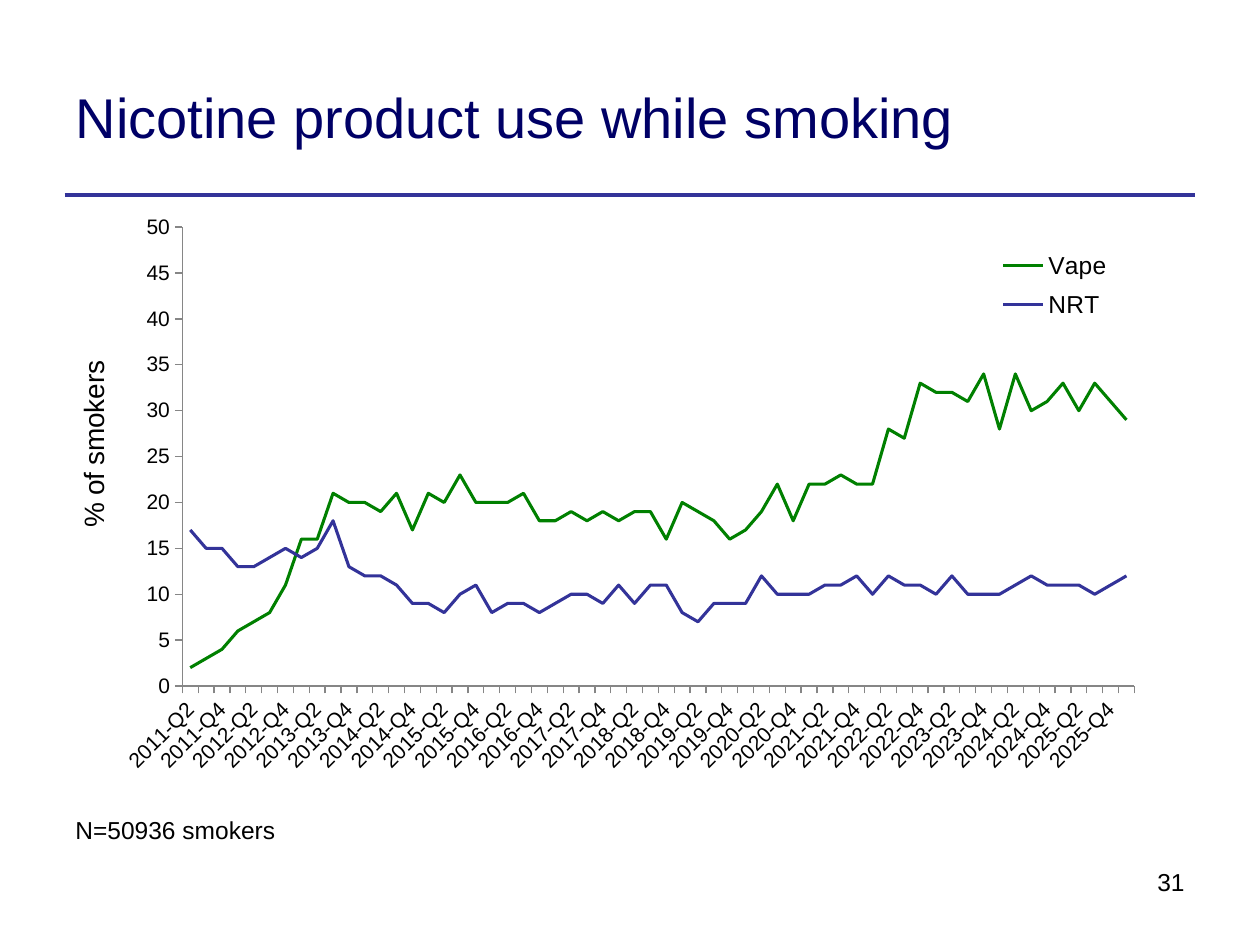
import pptx
import pptx.chart.data
import pptx.dml.color
import pptx.enum.chart
import pptx.enum.shapes
import pptx.enum.text
import pptx.oxml
import pptx.oxml.ns
import pptx.util
from pptx.util import Pt

FONT = "Arial"
COLORS = {"title": "000066", "rule": "333399", "text": "000000",
          "axis": "868686", "Vape": "008000", "NRT": "333399"}
SERIES = {
    "Vape": [2, 3, 4, 6, 7, 8, 11, 16, 16, 21, 20, 20, 19, 21, 17, 21, 20, 23, 20, 20,
             20, 21, 18, 18, 19, 18, 19, 18, 19, 19, 16, 20, 19, 18, 16, 17, 19, 22, 18, 22,
             22, 23, 22, 22, 28, 27, 33, 32, 32, 31, 34, 28, 34, 30, 31, 33, 30, 33, 31, 29],
    "NRT": [17, 15, 15, 13, 13, 14, 15, 14, 15, 18, 13, 12, 12, 11, 9, 9, 8, 10, 11, 8,
            9, 9, 8, 9, 10, 10, 9, 11, 9, 11, 11, 8, 7, 9, 9, 9, 12, 10, 10, 10,
            11, 11, 12, 10, 12, 11, 11, 10, 12, 10, 10, 10, 11, 12, 11, 11, 11, 10, 11, 12],
}
# Quarters run from 2011-Q2 to 2026-Q1
QUARTERS = [f"{2011 + n // 4}-Q{n % 4 + 1}" for n in range(1, 61)]


def color(name):
    return pptx.dml.color.RGBColor.from_string(COLORS[name])


def style_font(font, size, name="text"):
    font.name = FONT
    font.size = Pt(size)
    font.bold = False
    font.color.rgb = color(name)


def add_span(para, text, size, name="text"):
    span = para.add_run()
    span.text = text
    style_font(span.font, size, name)


def make_element(tag, **attributes):
    element = pptx.oxml.parse_xml(f"<{tag} {pptx.oxml.ns.nsdecls(tag.split(':')[0])}/>")
    for key, value in attributes.items():
        element.set(key, str(value))
    return element


def set_layout(parent, index, chart_box, box, inner=False):
    """Place a chart part at a box in points, measured within the chart area."""
    for old in parent.findall(pptx.oxml.ns.qn("c:layout")):
        parent.remove(old)
    layout = make_element("c:layout")
    manual = make_element("c:manualLayout")
    layout.append(manual)
    if inner:
        manual.append(make_element("c:layoutTarget", val="inner"))
    for key in "xy":
        manual.append(make_element(f"c:{key}Mode", val="edge"))
    for key, value, whole in zip("xywh", box, chart_box * 2):
        manual.append(make_element(f"c:{key}", val=value / whole))
    parent.insert(index, layout)


def add_heading(page, left, top, width, height):
    # Title
    title = page.shapes.title
    title.left, title.top, title.width, title.height = map(Pt, (left, top, width, height))
    title.text_frame.vertical_anchor = pptx.enum.text.MSO_ANCHOR.MIDDLE
    para = title.text_frame.paragraphs[0]
    para.alignment = pptx.enum.text.PP_ALIGN.LEFT
    add_span(para, "Nicotine product use while smoking", 32, "title")

    # Rule under the title
    bottom = Pt(top + height - 0.2)
    rule = page.shapes.add_connector(pptx.enum.shapes.MSO_CONNECTOR.STRAIGHT,
                                     Pt(left + 1), bottom, Pt(left + 647), bottom)
    rule.line.color.rgb = color("rule")
    rule.line.width = Pt(2.25)
    rule._element.spPr.append(make_element("a:effectLst"))


def style_axis(axis):
    axis.has_major_gridlines = False
    axis.major_tick_mark = pptx.enum.chart.XL_TICK_MARK.OUTSIDE
    axis.minor_tick_mark = pptx.enum.chart.XL_TICK_MARK.NONE
    axis.format.line.color.rgb = color("axis")
    axis.format.line.width = Pt(0.75)
    style_font(axis.tick_labels.font, 12)


def add_trend_chart(page, left, top, width, height):
    data = pptx.chart.data.CategoryChartData()
    data.categories = QUARTERS
    for name, values in SERIES.items():
        data.add_series(name, values)
    chart = page.shapes.add_chart(pptx.enum.chart.XL_CHART_TYPE.LINE, Pt(left), Pt(top),
                                  Pt(width), Pt(height), data).chart
    style_font(chart.font, 18)
    chart.has_title = False
    chart.plots[0].vary_by_categories = False
    area = (width, height)
    plot_area = chart._chartSpace.xpath("c:chart/c:plotArea")[0]
    set_layout(plot_area, 0, area, (72.2, 15.6, 544.1, 262.3), inner=True)

    # Lines
    for series in chart.plots[0].series:
        series.smooth = False
        series.marker.style = pptx.enum.chart.XL_MARKER_STYLE.NONE
        series.format.line.color.rgb = color(series.name)
        series.format.line.width = Pt(1.75)

    # Quarter axis: slanted labels, every second one shown
    quarters = chart.category_axis
    style_axis(quarters)
    axis_xml = quarters._element
    slant = axis_xml.xpath("c:txPr/a:bodyPr")[0]
    slant.set("rot", "-2700000")
    slant.set("vert", "horz")
    last = axis_xml.find(pptx.oxml.ns.qn("c:noMultiLvlLbl"))
    last.addprevious(make_element("c:tickLblSkip", val=2))
    last.addprevious(make_element("c:tickMarkSkip", val=1))

    # Percentage axis
    percent = chart.value_axis
    style_axis(percent)
    percent.minimum_scale, percent.maximum_scale, percent.major_unit = 0, 50, 5
    percent.tick_labels.number_format = "General"
    percent.tick_labels.number_format_is_linked = False
    add_span(percent.axis_title.text_frame.paragraphs[0], "% of smokers", 16)
    set_layout(percent.axis_title._element, 1, area, (8.4, 89.2))

    # Legend
    chart.has_legend = True
    legend = chart.legend
    legend.position = pptx.enum.chart.XL_LEGEND_POSITION.RIGHT
    legend.include_in_layout = False
    style_font(legend.font, 14)
    set_layout(legend._element, 1, area, (532.6, 23.2, 76.6, 51))


def add_note(page, text, left, top, width, height, align, wrap):
    frame = page.shapes.add_textbox(Pt(left), Pt(top), Pt(width), Pt(height)).text_frame
    frame.word_wrap = wrap
    para = frame.paragraphs[0]
    para.alignment = align
    add_span(para, text, 14)


def main():
    deck = pptx.Presentation()
    deck.slide_width, deck.slide_height = Pt(720), Pt(540)
    page = deck.slides.add_slide(deck.slide_layouts[5])
    align = pptx.enum.text.PP_ALIGN
    add_heading(page, 36, 21.6, 568, 90)
    add_note(page, "31", 484.5, 491.75, 199.5, 37.5, align.RIGHT, True)
    add_trend_chart(page, 32, 114.2, 638.6, 346)
    add_note(page, "N=50936 smokers", 36, 462.25, 129.6, 24.5, align.LEFT, False)
    deck.save("out.pptx")


if __name__ == "__main__":
    main()
